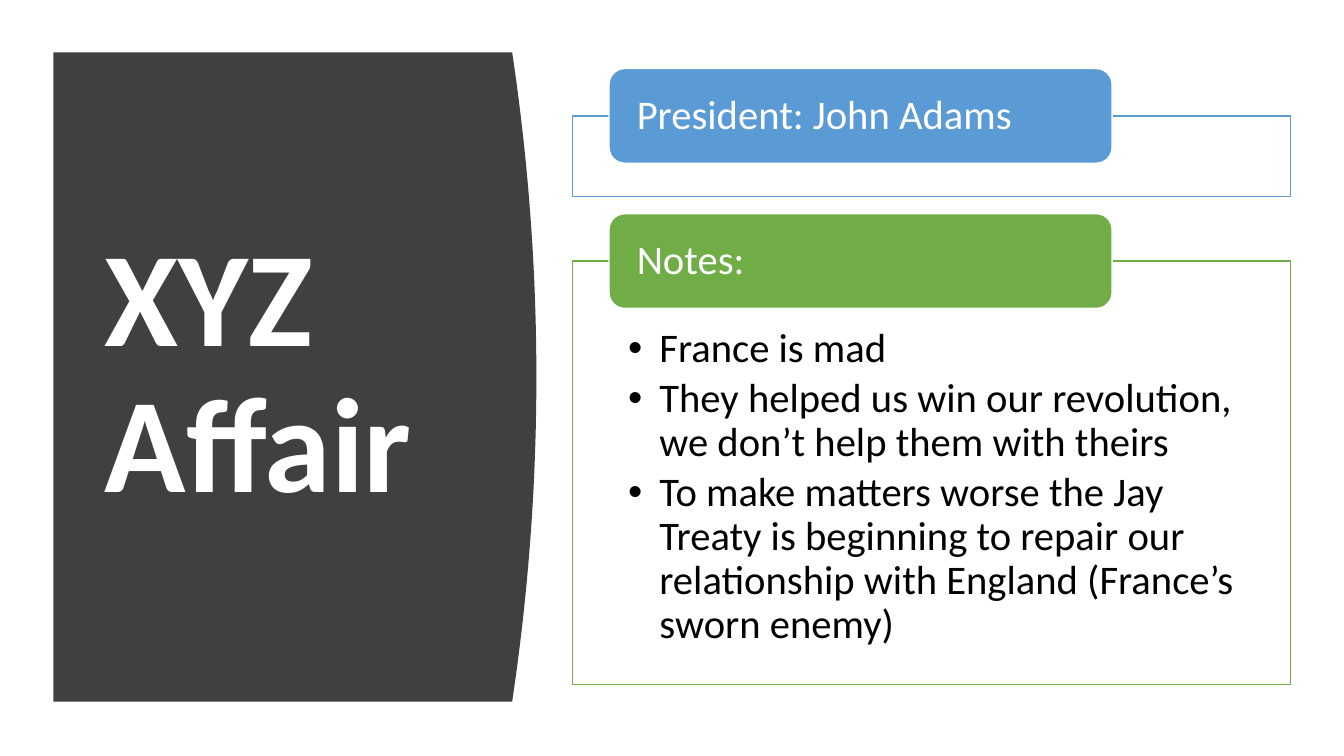
from lxml.etree import SubElement
from pptx import Presentation
from pptx.dml.color import RGBColor
from pptx.enum.shapes import MSO_SHAPE
from pptx.enum.text import MSO_ANCHOR, MSO_AUTO_SIZE, PP_ALIGN
from pptx.oxml.ns import qn
from pptx.util import Inches, Pt

WHITE = RGBColor(0xFF, 0xFF, 0xFF)
BLACK = RGBColor(0x00, 0x00, 0x00)
CHARCOAL = RGBColor(0x40, 0x40, 0x40)
BLUE = RGBColor(0x5B, 0x9B, 0xD5)
GREEN = RGBColor(0x70, 0xAD, 0x47)

NOTES = [
    "France is mad",
    "They helped us win our revolution, we don’t help them with theirs",
    "To make matters worse the Jay Treaty is beginning to repair our "
    "relationship with England (France’s sworn enemy)",
]


class AffairSlide:
    font = "Calibri"
    text_size = 29
    title_size = 96
    panel_left, panel_width = 5.68, 7.12
    tab_left, tab_width, tab_height = 6.04, 4.99, 0.94
    tab_rise = 0.47

    def __init__(self, slide):
        self.slide = slide

    def add_words(self, paragraph, words, size, color, bold=False):
        paragraph.alignment = PP_ALIGN.LEFT
        paragraph.line_spacing = 0.9
        paragraph.space_before = Pt(0)
        run = paragraph.add_run()
        run.text = words
        run.font.name = self.font
        run.font.size = Pt(size)
        run.font.bold = bold
        run.font.color.rgb = color

    def margins(self, frame, side, top, bottom):
        frame.word_wrap = True
        frame.auto_size = MSO_AUTO_SIZE.NONE
        frame.margin_left = frame.margin_right = Inches(side)
        frame.margin_top, frame.margin_bottom = Inches(top), Inches(bottom)

    def place(self, holder, left, top, width, height):
        holder.left, holder.top = Inches(left), Inches(top)
        holder.width, holder.height = Inches(width), Inches(height)
        holder.element.getparent().append(holder.element)
        return holder.text_frame

    def paint(self, shape, fill, line=None):
        shape.shadow.inherit = False
        shape.fill.solid()
        shape.fill.fore_color.rgb = fill
        if line is None:
            shape.line.fill.background()
        else:
            shape.line.color.rgb = line
            shape.line.width = Pt(1)

    def backdrop(self, left, top, edge, bottom, bulge, steps=40):
        curve = []
        for step in range(steps + 1):
            along = step / steps
            x = edge + bulge * (1 - (2 * along - 1) ** 2)
            curve.append((Inches(x), Inches(top + (bottom - top) * along)))
        outline = self.slide.shapes.build_freeform(Inches(left), Inches(top))
        outline.add_line_segments(curve + [(Inches(left), Inches(bottom))], close=True)
        self.paint(outline.convert_to_shape(), CHARCOAL)

    def title(self, words, *box):
        frame = self.place(self.slide.shapes.title, *box)
        self.margins(frame, 0.1, 0.05, 0.05)
        frame.vertical_anchor = MSO_ANCHOR.MIDDLE
        self.add_words(frame.paragraphs[0], words, self.title_size, WHITE, bold=True)

    def panel(self, top, height, color):
        panel = self.slide.shapes.add_shape(
            MSO_SHAPE.RECTANGLE, Inches(self.panel_left), Inches(top),
            Inches(self.panel_width), Inches(height))
        self.paint(panel, WHITE, color)

    def tab(self, words, panel_top, color):
        tab = self.slide.shapes.add_shape(
            MSO_SHAPE.ROUNDED_RECTANGLE, Inches(self.tab_left),
            Inches(panel_top - self.tab_rise),
            Inches(self.tab_width), Inches(self.tab_height))
        self.paint(tab, color, WHITE)
        self.margins(tab.text_frame, 0.23, 0, 0)
        tab.text_frame.vertical_anchor = MSO_ANCHOR.MIDDLE
        self.add_words(tab.text_frame.paragraphs[0], words, self.text_size, WHITE)

    def bullets(self, lines, top, height):
        frame = self.place(self.slide.placeholders[1], self.panel_left, top,
                           self.panel_width, height)
        self.margins(frame, 0.55, 0.66, 0.23)
        frame.vertical_anchor = MSO_ANCHOR.TOP
        for index, line in enumerate(lines):
            paragraph = frame.add_paragraph() if index else frame.paragraphs[0]
            self.add_words(paragraph, line, self.text_size, BLACK)
            paragraph.space_after = Pt(4.5)
            properties = paragraph._p.get_or_add_pPr()
            properties.set("marL", str(Inches(0.31)))
            properties.set("indent", str(Inches(-0.31)))
            SubElement(properties, qn("a:buFont"), typeface="Arial")
            SubElement(properties, qn("a:buChar"), char="•")


def main():
    deck = Presentation()
    deck.slide_width, deck.slide_height = Inches(13.33), Inches(7.5)
    affair = AffairSlide(deck.slides.add_slide(deck.slide_layouts[1]))

    affair.backdrop(left=0.53, top=0.52, edge=5.08, bottom=6.96, bulge=0.24)
    affair.title("XYZ Affair", 0.94, 1.11, 3.74, 5.24)

    president_top, notes_top, notes_height = 1.15, 2.59, 4.2
    affair.panel(president_top, 0.8, BLUE)
    affair.tab("President: John Adams", president_top, BLUE)
    affair.panel(notes_top, notes_height, GREEN)
    affair.bullets(NOTES, notes_top, notes_height)
    affair.tab("Notes:", notes_top, GREEN)

    deck.save("out.pptx")


if __name__ == "__main__":
    main()
